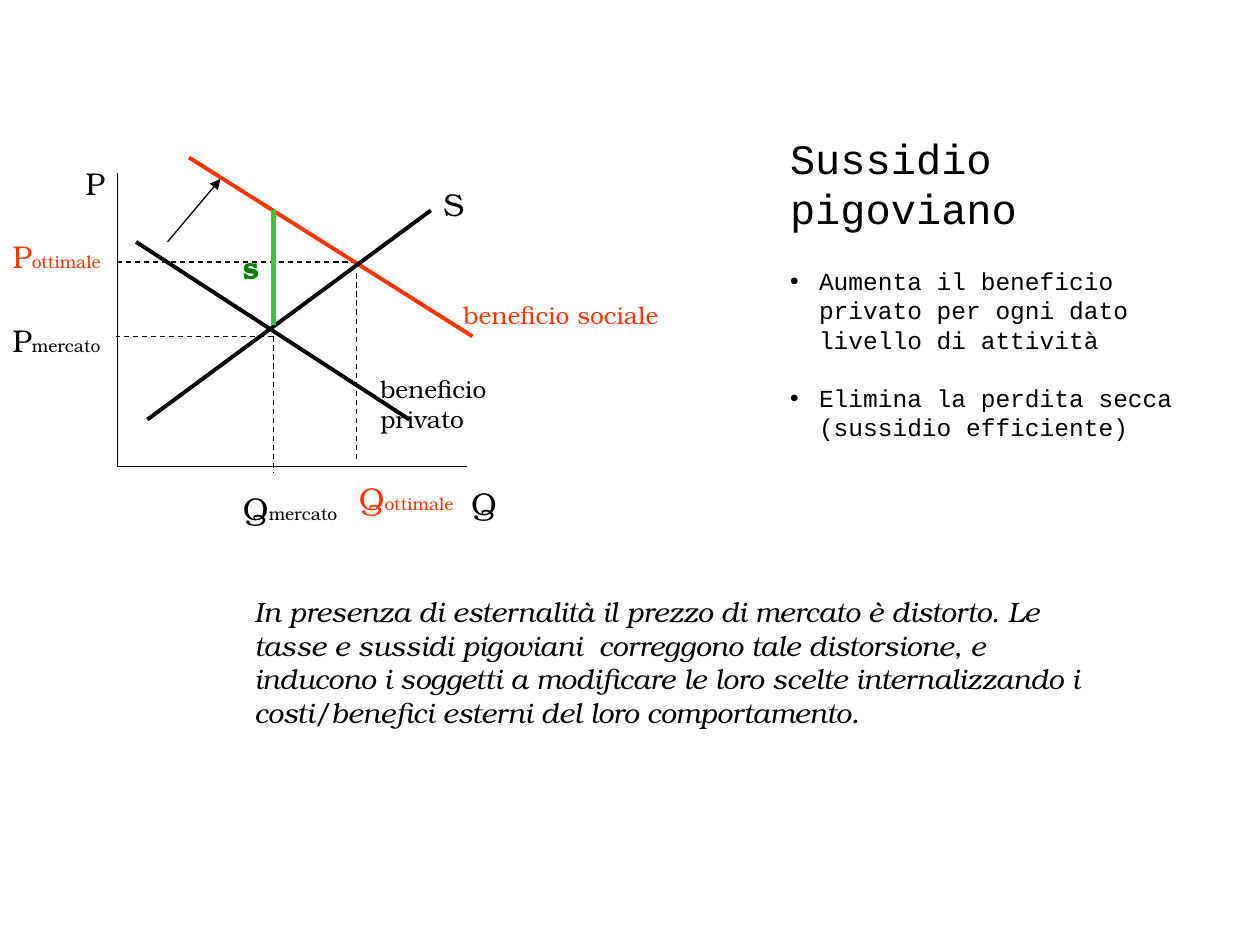
from lxml import etree
from pptx import Presentation, util as u
from pptx.dml.color import RGBColor
from pptx.enum import dml, shapes, text
from pptx.oxml.ns import qn

BLACK, RED, GREEN, DARK_GREEN = "000000", "FF3300", "33CC33", "008000"
SERIF, MONO = "TeX Gyre Bonum", "Courier New"


def color(hex_string):
    return RGBColor.from_string(hex_string)


def set_font(font, name, size, hex_color=BLACK, bold=False, italic=False):
    font.name, font.size = name, u.Pt(size)
    font.color.rgb = color(hex_color)
    font.bold, font.italic = bold, italic


def add_line(slide, start, end, hex_color=BLACK, width=0.75, dashed=False, arrow=False):
    line = slide.shapes.add_connector(
        shapes.MSO_CONNECTOR.STRAIGHT, *(u.Inches(value) for value in start + end))
    line.line.color.rgb = color(hex_color)
    line.line.width = u.Pt(width)
    if dashed:
        line.line.dash_style = dml.MSO_LINE.DASH
    if arrow:
        etree.SubElement(line.line._get_or_add_ln(), qn("a:tailEnd"), type="triangle")
    etree.SubElement(line._element.spPr, qn("a:effectLst"))


def add_text(slide, box, content, size, hex_color=BLACK, suffix="", wrap=False, **style):
    """Add a text box; the suffix follows as a smaller run."""
    shape = slide.shapes.add_textbox(*(u.Inches(value) for value in box))
    shape.text_frame.word_wrap = wrap
    paragraph = shape.text_frame.paragraphs[0]
    set_font(paragraph.font, SERIF, size, hex_color, **style)
    paragraph.add_run().text = content
    if suffix:
        run = paragraph.add_run()
        run.text = suffix
        run.font.size = u.Pt(10)


def fill_placeholder(shape, box, lines, size, gap=0):
    """Move a placeholder and fill it, one paragraph per line."""
    shape.left, shape.top, shape.width, shape.height = (u.Inches(value) for value in box)
    frame = shape.text_frame
    frame.text = "\n".join(lines)
    frame.word_wrap = True
    frame.auto_size = text.MSO_AUTO_SIZE.NONE
    frame.vertical_anchor = text.MSO_ANCHOR.TOP
    for index, paragraph in enumerate(frame.paragraphs):
        paragraph.alignment = text.PP_ALIGN.LEFT
        paragraph.space_before = u.Pt(gap if index else 0)
        set_font(paragraph.font, MONO, size)


def set_bullets(shape, indent):
    for paragraph in shape.text_frame.paragraphs:
        properties = paragraph._p.get_or_add_pPr()
        properties.set("marL", str(u.Inches(indent)))
        properties.set("indent", str(-u.Inches(indent)))


def add_diagram(slide):
    # Dashed guides to the optimal and market equilibria
    for start, end in [((2.83, 2.08), (0.92, 2.08)), ((2.83, 2.17), (2.83, 3.67)),
                       ((2.17, 2.67), (0.92, 2.67)), ((2.17, 2.67), (2.17, 3.75))]:
        add_line(slide, start, end, dashed=True)

    # Axes
    origin = (0.93, 3.7)
    add_line(slide, (0.93, 1.37), origin)
    add_line(slide, origin, (3.71, 3.7))

    # Social benefit, supply and private benefit
    add_line(slide, (1.5, 1.25), (3.75, 2.67), RED, 2.25)
    add_line(slide, (1.17, 3.33), (3.42, 1.67), width=2.25)
    add_line(slide, (1.08, 1.92), (3.25, 3.33), width=2.25)

    # Subsidy and shift of the demand curve
    add_line(slide, (2.17, 2.58), (2.17, 1.67), GREEN, 3)
    add_line(slide, (1.33, 1.92), (1.75, 1.42), arrow=True)

    # Axis, price and quantity labels
    for left, top, width, letter, suffix, hex_color in [
            (0.58, 1.25, 0.36, "P", "", BLACK),
            (3.64, 3.79, 0.4, "Q", "", BLACK),
            (3.42, 1.42, 0.37, "S", "", BLACK),
            (0, 1.83, 0.9, "P", "ottimale", RED),
            (0, 2.5, 0.9, "P", "mercato", BLACK),
            (2.75, 3.75, 0.95, "Q", "ottimale", RED),
            (1.83, 3.83, 0.95, "Q", "mercato", BLACK)]:
        add_text(slide, (left, top, width, 0.4), letter, 18, hex_color, suffix)
    add_text(slide, (1.83, 1.92, 0.33, 0.4), "s", 18, DARK_GREEN, bold=True)

    # Curve labels
    add_text(slide, (3.58, 2.33, 1.75, 0.33), "beneficio sociale", 14, RED)
    add_text(slide, (2.92, 2.92, 1.3, 0.57), "beneficio privato", 14, wrap=True)


def main():
    presentation = Presentation()
    presentation.slide_width, presentation.slide_height = u.Inches(10), u.Inches(7.5)
    slide = presentation.slides.add_slide(presentation.slide_layouts[1])

    # Title and bullet list
    fill_placeholder(slide.shapes.title, (6.17, 1, 3.33, 0.9), ["Sussidio pigoviano"], 24)
    body = slide.placeholders[1]
    fill_placeholder(body, (6.17, 2.06, 3.33, 1.5), [
        "Aumenta il beneficio privato per ogni dato livello di attività",
        "Elimina la perdita secca (sussidio efficiente)"], 14, gap=16.5)
    set_bullets(body, 0.23)

    add_diagram(slide)

    # Conclusion
    add_text(slide, (1.92, 4.67, 6.92, 1.17),
             "In presenza di esternalità il prezzo di mercato è distorto. Le tasse e "
             "sussidi pigoviani  correggono tale distorsione, e inducono i soggetti a "
             "modificare le loro scelte internalizzando i costi/benefici esterni del "
             "loro comportamento.", 16, wrap=True, italic=True)

    presentation.save("out.pptx")


if __name__ == "__main__":
    main()
